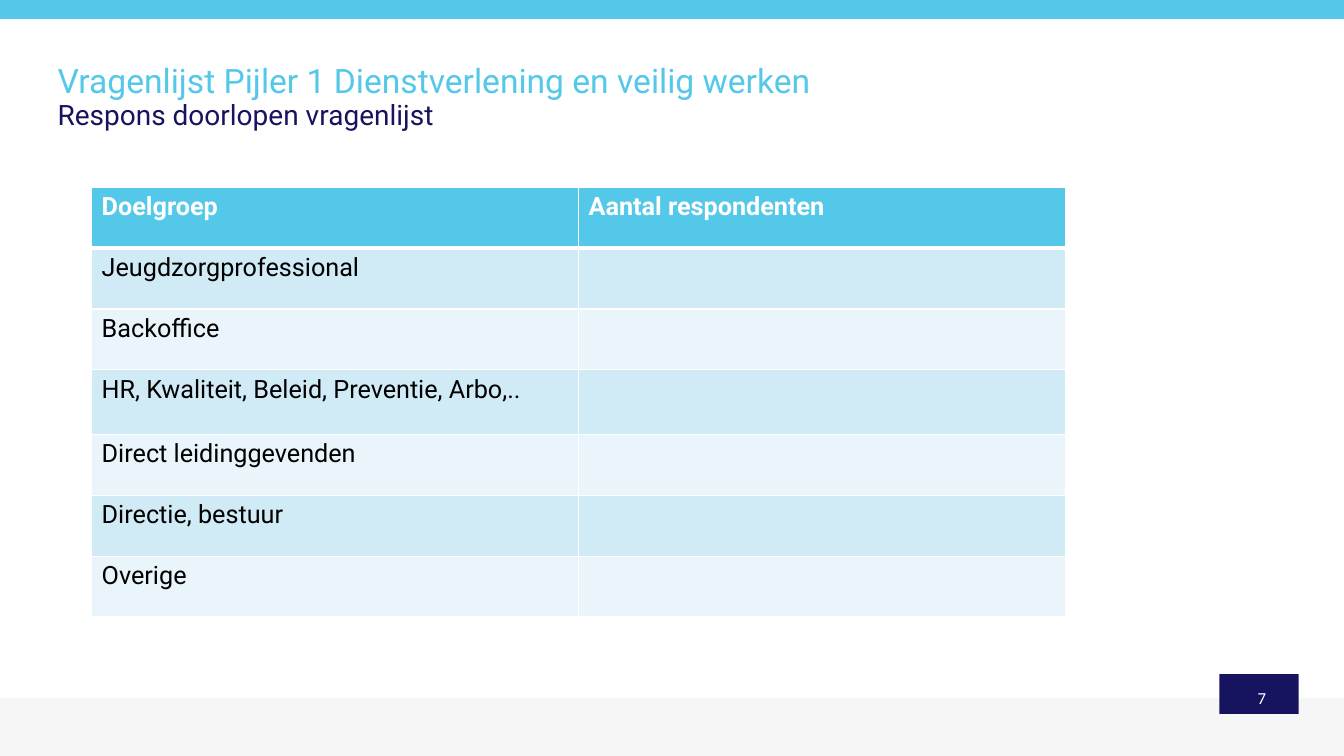
from collections import namedtuple
from dataclasses import dataclass

from lxml import etree
from pptx import Presentation
from pptx.dml.color import RGBColor
from pptx.enum.shapes import MSO_SHAPE
from pptx.enum.text import MSO_ANCHOR, PP_ALIGN
from pptx.oxml.ns import qn
from pptx.util import Cm, Pt

RECTANGLE = MSO_SHAPE.RECTANGLE
TOP, MIDDLE = MSO_ANCHOR.TOP, MSO_ANCHOR.MIDDLE
LEFT, CENTER = PP_ALIGN.LEFT, PP_ALIGN.CENTER
TITLE_ONLY = 5

Box = namedtuple("Box", "left top width height")


@dataclass(frozen=True)
class Theme:
    sky: str = "54C8E8"
    navy: str = "16145F"
    footer: str = "F4F4F4"
    white: str = "FFFFFF"
    black: str = "000000"
    bands: tuple = ("D1EBF6", "E9F5FB")
    font: str = "Roboto"
    number_font: str = "Calibri"
    title_size: int = 24
    subtitle_size: int = 20
    table_size: int = 18
    number_size: int = 12


THEME = Theme()
PAGE = Box(Cm(0), Cm(0), Cm(33.87), Cm(19.05))
GROUPS = ["Jeugdzorgprofessional", "Backoffice",
          "HR, Kwaliteit, Beleid, Preventie, Arbo,..",
          "Direct leidinggevenden", "Directie, bestuur\u00a0", "Overige"]

# Outline of the number badge in cm: a start, then Bézier segments of three points
BADGE_START = (1.04, 0)
BADGE_CURVES = [
    [(0.97, 0), (0.89, 0.03), (0.81, 0.05)],
    [(0.61, 0.1), (0.25, 0.41), (0.13, 0.74)],
    [(0, 1.09), (1.27, 1.19), (1.37, 1.22)],
    [(1.4, 1.24), (1.42, 1.24), (1.45, 1.24)],
    [(1.68, 1.24), (2.01, 1.02), (1.7, 0.51)],
    [(1.47, 0.1), (1.24, 0), (1.04, 0)],
]


def write(para, text, size, color, font=THEME.font, bold=False, align=LEFT,
          spacing=None):
    """Fill one paragraph with one formatted span."""
    para.alignment = align
    if spacing:
        para.line_spacing = spacing
    para.font.size = Pt(size)
    if text:
        span = para.add_run()
        span.text = text
        span.font.name, span.font.size, span.font.bold = font, Pt(size), bold
        span.font.color.rgb = RGBColor.from_string(color)


def prepare_frame(shape, anchor):
    frame = shape.text_frame
    frame.word_wrap = True
    frame.vertical_anchor = anchor
    frame.margin_left = frame.margin_right = 0
    frame.margin_top = frame.margin_bottom = 0
    return frame


def paint(shape, color):
    shape.shadow.inherit = False
    shape.fill.solid()
    shape.fill.fore_color.rgb = RGBColor.from_string(color)
    shape.line.fill.background()


def add_bands(page, box):
    """Top strip and translucent footer strip."""
    footer_height, strip_height = Cm(1.45), Cm(0.48)
    footer = page.shapes.add_shape(RECTANGLE, box.left, box.top + box.height - footer_height,
                                   box.width, footer_height)
    paint(footer, THEME.footer)
    color = footer.fill._xPr.find(".//" + qn("a:srgbClr"))
    etree.SubElement(color, qn("a:alpha"), val="80000")
    strip = page.shapes.add_shape(RECTANGLE, box.left, box.top, box.width, strip_height)
    paint(strip, THEME.sky)


def curve_points(start, curves, steps=12):
    """Sample the Bézier segments as points."""
    points = []
    for first, second, end in curves:
        for step in range(1, steps + 1):
            t = step / steps
            points.append(tuple(
                (1 - t) ** 3 * a + 3 * (1 - t) ** 2 * t * b + 3 * (1 - t) * t ** 2 * c + t ** 3 * d
                for a, b, c, d in zip(start, first, second, end)))
        start = end
    return points


def add_page_number(page, box, number):
    """Rounded badge with the page number on it."""
    builder = page.shapes.build_freeform(*BADGE_START, scale=Cm(1))
    builder.add_line_segments(curve_points(BADGE_START, BADGE_CURVES))
    paint(builder.convert_to_shape(box.left, box.top), THEME.navy)
    label = page.shapes.add_textbox(box.left + Cm(0.46), box.top + Cm(0.08), Cm(1.22), Cm(1.04))
    write(prepare_frame(label, MIDDLE).paragraphs[0], number, THEME.number_size,
          THEME.white, font=THEME.number_font, align=CENTER)


def add_heading(page, box, title, subtitle):
    """Title and subtitle in the title placeholder."""
    holder = page.shapes.title
    holder.left, holder.top, holder.width, holder.height = box
    frame = prepare_frame(holder, TOP)
    write(frame.paragraphs[0], title, THEME.title_size, THEME.sky, spacing=0.9)
    write(frame.add_paragraph(), subtitle, THEME.subtitle_size, THEME.navy, spacing=0.9)


def set_borders(cell, color, bottom_width):
    properties = cell._tc.get_or_add_tcPr()
    for side in "LRTB":
        width = bottom_width if side == "B" else 1
        line = etree.SubElement(properties, qn("a:ln" + side), w=str(Pt(width)))
        fill = etree.SubElement(line, qn("a:solidFill"))
        etree.SubElement(fill, qn("a:srgbClr"), val=color)


def add_response_table(page, box, header, groups):
    """Target groups with an open column for the number of respondents."""
    rows = [header] + [(group, "") for group in groups]
    table = page.shapes.add_table(len(rows), len(header), *box).table
    for column in table.columns:
        column.width = box.width // len(header)
    tall_row, tall_height = 3, Cm(1.63)
    for index, texts in enumerate(rows):
        is_header = index == 0
        table.rows[index].height = (tall_height if index == tall_row
                                    else (box.height - tall_height) // (len(rows) - 1))
        for cell, text in zip(table.rows[index].cells, texts):
            set_borders(cell, THEME.white, 3 if is_header else 1)
            cell.fill.solid()
            cell.fill.fore_color.rgb = RGBColor.from_string(
                THEME.sky if is_header else THEME.bands[(index - 1) % 2])
            write(cell.text_frame.paragraphs[0], text, THEME.table_size,
                  THEME.white if is_header else THEME.black, bold=is_header)


def build_response_page(deck, box):
    page = deck.slides.add_slide(deck.slide_layouts[TITLE_ONLY])
    add_bands(page, box)
    add_page_number(page, Box(box.left + Cm(30.73), box.top + Cm(16.99), Cm(2.01), Cm(1.24)), "7")
    add_heading(page, Box(box.left + Cm(1.45), box.top + Cm(1.63), Cm(30.91), Cm(2.06)),
                "Vragenlijst Pijler 1 Dienstverlening en veilig werken",
                "Respons doorlopen vragenlijst")
    add_response_table(page, Box(box.left + Cm(2.31), box.top + Cm(4.72), Cm(24.54), Cm(10.83)),
                       ("Doelgroep", "Aantal respondenten"), GROUPS)


def main():
    deck = Presentation()
    deck.slide_width, deck.slide_height = PAGE.width, PAGE.height
    build_response_page(deck, PAGE)
    deck.save("out.pptx")


if __name__ == "__main__":
    main()
